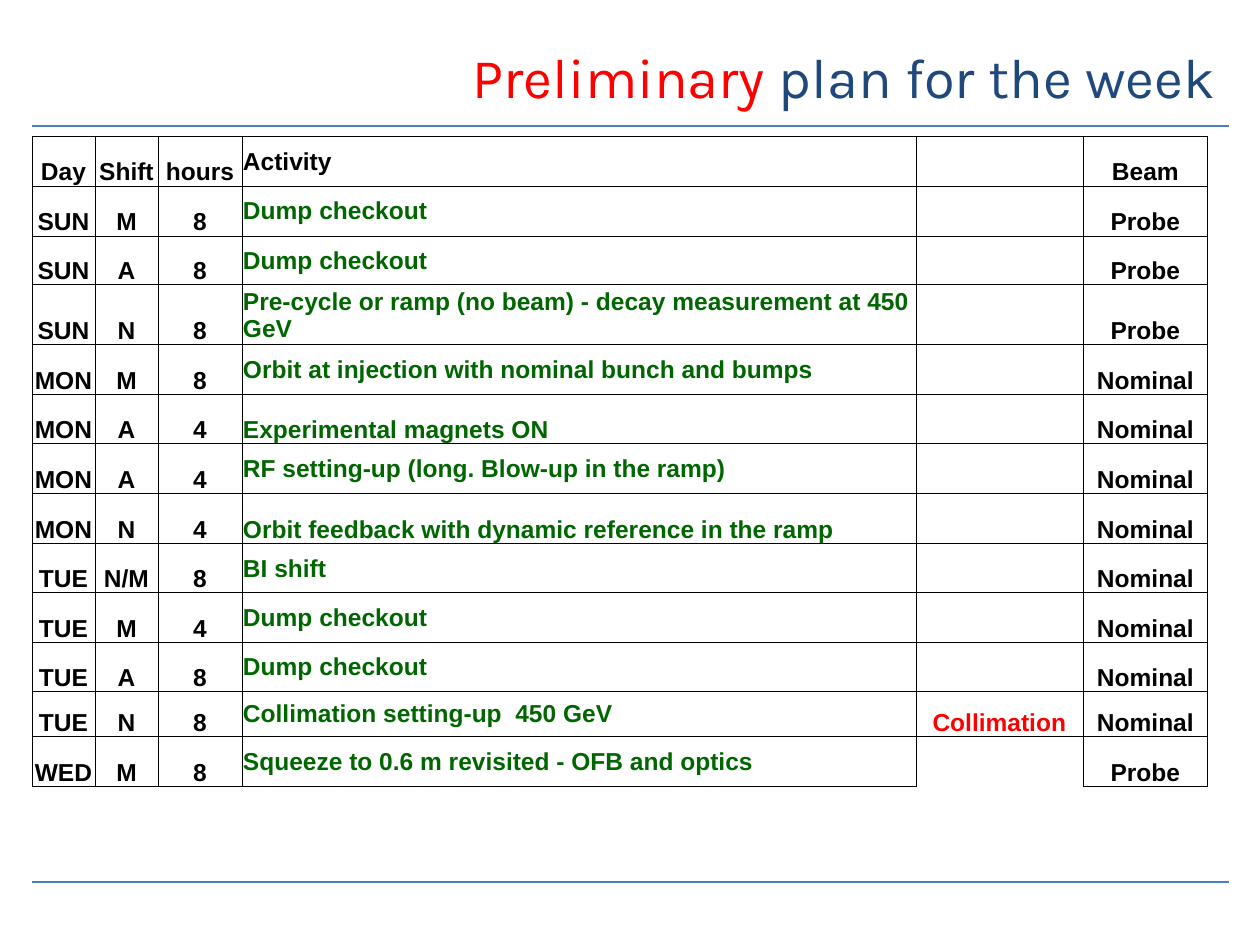
from lxml.etree import SubElement
from pptx import Presentation
from pptx.dml.color import RGBColor
from pptx.enum.shapes import MSO_CONNECTOR
from pptx.enum.text import MSO_ANCHOR, PP_ALIGN
from pptx.oxml.ns import qn
from pptx.util import Emu, Pt

COLORS = {"rule": "4B7EBC", "red": "FF0000", "navy": "1F497D",
          "green": "006600", "black": "000000", "white": "FFFFFF"}
COLUMNS = [63, 63, 84, 674, 167, 125]
HEIGHTS = [50, 50, 49, 56, 50, 49, 50, 50, 49, 50, 49, 45, 50]
ROWS = [
    ("Day", "Shift", "hours", "Activity", "", "Beam"),
    ("SUN", "M", "8", "Dump checkout", "", "Probe"),
    ("SUN", "A", "8", "Dump checkout", "", "Probe"),
    ("SUN", "N", "8", "Pre-cycle or ramp (no beam) - decay measurement at 450 GeV", "", "Probe"),
    ("MON", "M", "8", "Orbit at injection with nominal bunch and bumps", "", "Nominal"),
    ("MON", "A", "4", "Experimental magnets ON", "", "Nominal"),
    ("MON", "A", "4", "RF setting-up (long. Blow-up in the ramp)", "", "Nominal"),
    ("MON", "N", "4", "Orbit feedback with dynamic reference in the ramp", "", "Nominal"),
    ("TUE", "N/M", "8", "BI shift", "", "Nominal"),
    ("TUE", "M", "4", "Dump checkout", "", "Nominal"),
    ("TUE", "A", "8", "Dump checkout", "", "Nominal"),
    ("TUE", "N", "8", "Collimation setting-up  450 GeV", "Collimation", "Nominal"),
    ("WED", "M", "8", "Squeeze to 0.6 m revisited - OFB and optics", "", "Probe"),
]
ACTIVITY, NOTE = 3, 4
LOW_ACTIVITY_ROWS = {5, 7}


def px(length):
    """Turn pixels into EMU."""
    return Emu(round(length * 914400 / 126))


def apply(target, values):
    """Set attributes from a dict of format values."""
    for name, value in values.items():
        setattr(target, name, value)


def add_span(para, text, color, **values):
    """Add one coloured run to a paragraph."""
    span = para.add_run()
    span.text = text
    apply(span.font, values)
    span.font.color.rgb = RGBColor.from_string(COLORS[color])


def add_rule(page, left, top, width):
    """Draw a horizontal rule."""
    rule = page.shapes.add_connector(
        MSO_CONNECTOR.STRAIGHT, px(left), px(top), px(left + width), px(top))
    rule.line.width = Pt(1.5)
    rule.line.color.rgb = RGBColor.from_string(COLORS["rule"])
    SubElement(rule._element.spPr, qn("a:effectLst"))


def add_title(page, left, top, width, height):
    """Place the two-colour heading."""
    box = page.shapes.add_textbox(px(left), px(top), px(width), px(height))
    apply(box.text_frame, {"word_wrap": True, "vertical_anchor": MSO_ANCHOR.MIDDLE})
    para = box.text_frame.paragraphs[0]
    para.alignment = PP_ALIGN.RIGHT
    for text, color in (("Preliminary", "red"), (" plan for the week", "navy")):
        add_span(para, text, color, name="Karla", size=Pt(32))


def add_borders(cell, hidden=()):
    """Outline a cell, leaving out the hidden sides."""
    properties = cell._tc.get_or_add_tcPr()
    for side in ("L", "R", "T", "B"):
        line = SubElement(properties, qn(f"a:ln{side}"), w=str(Pt(0.5)))
        if side in hidden:
            SubElement(line, qn("a:noFill"))
        else:
            fill = SubElement(line, qn("a:solidFill"))
            SubElement(fill, qn("a:srgbClr"), val=COLORS["black"])


def fill_cell(cell, text, row, column):
    """Format one cell of the plan by its row and column."""
    is_activity = column == ACTIVITY
    is_middle = is_activity and row not in LOW_ACTIVITY_ROWS
    is_open = column == NOTE and row == len(ROWS) - 1
    add_borders(cell, "B" if is_open else "")
    if column < ACTIVITY:
        cell.fill.background()
    else:
        cell.fill.solid()
        cell.fill.fore_color.rgb = RGBColor.from_string(COLORS["white"])
    apply(cell, {"margin_left": px(1), "margin_right": px(1), "margin_top": px(1),
                 "margin_bottom": 0,
                 "vertical_anchor": MSO_ANCHOR.MIDDLE if is_middle else MSO_ANCHOR.BOTTOM})
    if text:
        para = cell.text_frame.paragraphs[0]
        para.alignment = PP_ALIGN.LEFT if is_activity else PP_ALIGN.CENTER
        color = {ACTIVITY: "green", NOTE: "red"}.get(column, "black") if row else "black"
        add_span(para, text, color, name="Arial", size=Pt(14), bold=True)


def add_plan(page, left, top):
    """Place the table of shifts."""
    frame = page.shapes.add_table(len(ROWS), len(COLUMNS), px(left), px(top),
                                  px(sum(COLUMNS)), px(sum(HEIGHTS)))
    table = frame.table
    apply(table, {"first_row": False, "horz_banding": False})
    for column, width in zip(table.columns, COLUMNS):
        column.width = px(width)
    for line, height in zip(table.rows, HEIGHTS):
        line.height = px(height)
    for row, texts in enumerate(ROWS):
        for column, text in enumerate(texts):
            fill_cell(table.cell(row, column), text, row, column)


def main():
    """Build the slide and save the deck."""
    deck = Presentation()
    apply(deck, {"slide_width": px(1260), "slide_height": px(945)})
    page = deck.slides.add_slide(deck.slide_layouts[6])
    for top in (126, 882):
        add_rule(page, 32, top, 1197)
    add_title(page, 94, 21, 1134, 110)
    add_plan(page, 32, 136)
    deck.save("out.pptx")


if __name__ == "__main__":
    main()
